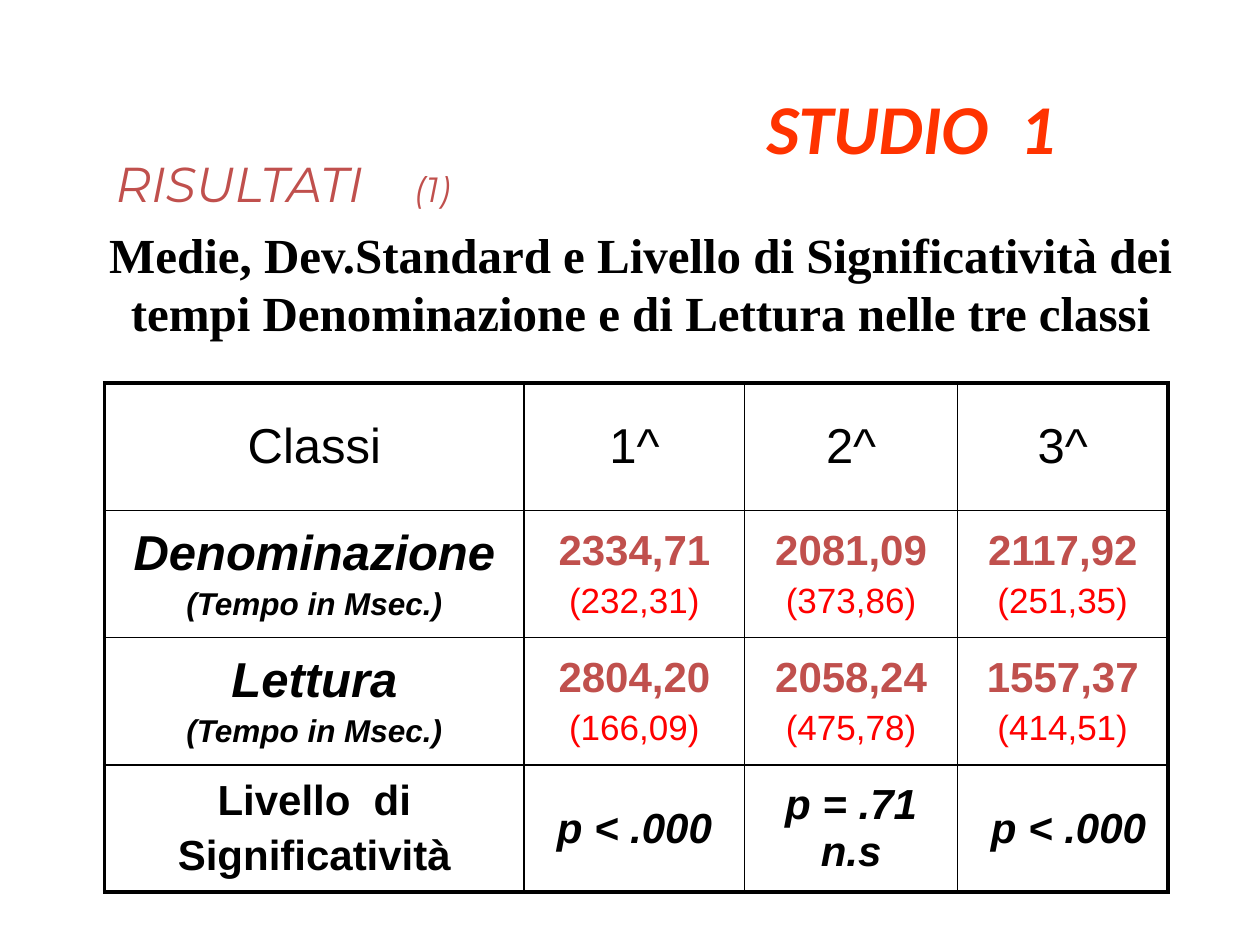
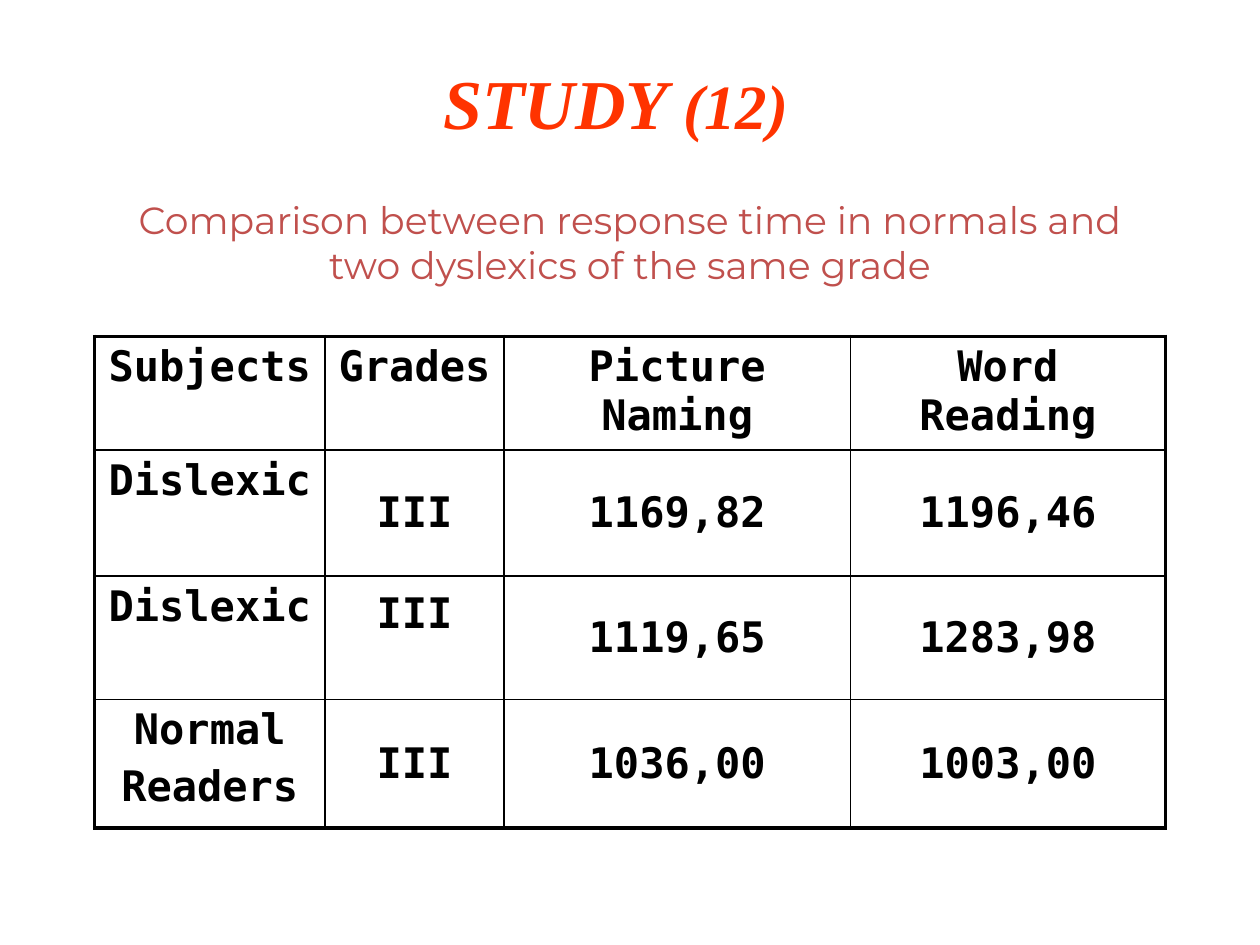
"""Build two result slides, each with headings and a bordered table of response times."""
from lxml.etree import SubElement
from pptx import Presentation
from pptx.dml.color import RGBColor
from pptx.enum.text import MSO_ANCHOR, PP_ALIGN
from pptx.oxml.ns import qn
from pptx.util import Inches, Pt

BLACK, ORANGE, BRICK, RED = "000000", "FF3300", "C0504D", "FF0000"
THIN, THICK = 1, 2.25


def color(hex_code):
    return RGBColor.from_string(hex_code)


def write(para, text, font="Arial", size=28, fill=BLACK, bold=False, italic=False, align=PP_ALIGN.CENTER):
    para.alignment = align
    span = para.add_run()
    span.text = text
    span.font.name = font
    span.font.size = Pt(size)
    span.font.bold = bold
    span.font.italic = italic
    span.font.color.rgb = color(fill)


class_head = {}
task = {"bold": True, "italic": True}
unit = {"size": 18, "bold": True, "italic": True}
mean = {"size": 24, "fill": BRICK, "bold": True}
deviation = {"size": 20, "fill": RED}
level = {"size": 24, "bold": True}
probability = {"size": 24, "bold": True, "italic": True}
mono = {"font": "DejaVu Sans Mono", "size": 24, "bold": True}
studio = {"font": "Calibri", "size": 40, "fill": ORANGE, "bold": True, "italic": True}
study = {**studio, "font": "Times New Roman", "align": PP_ALIGN.LEFT}
results = {"font": "Montserrat", "size": 28, "fill": BRICK, "italic": True, "align": PP_ALIGN.LEFT}
caption = {"font": "Times New Roman", "size": 28, "bold": True}
comparison = {"font": "Montserrat", "size": 21.6, "fill": BRICK}

class_rows = [[[(text, class_head)] for text in ("Classi", "1^", "2^", "3^")]]
for name, scores in (
    ("Denominazione", (("2334,71", "(232,31)"), ("2081,09", "(373,86)"), ("2117,92", "(251,35)"))),
    ("Lettura", (("2804,20", "(166,09)"), ("2058,24", "(475,78)"), ("1557,37", "(414,51)"))),
):
    class_rows.append([[(name, task), ("(Tempo in Msec.)", unit)]]
                      + [[(average, mean), (spread, deviation)] for average, spread in scores])
class_rows.append([[("Livello  di", level), ("Significatività", level)]]
                  + [[(text, probability)] for text in ("p < .000", "p = .71 n.s", " p < .000")])

reader_rows = [[[(line, mono) for line in text.split("\n")] for text in row] for row in (
    ("Subjects", "Grades", "Picture Naming", "Word Reading"),
    ("Dislexic", "III", "1169,82", "1196,46"),
    ("Dislexic", "III", "1119,65", "1283,98"),
    ("Normal\nReaders", "III", "1036,00", "1003,00"),
)]

pages = [
    {
        "boxes": [
            ((4.98, 0.6, 4.5, 0.81), MSO_ANCHOR.MIDDLE, True, [("STUDIO  1", studio)]),
            ((0.82, 1.17, 3.78, 0.57), MSO_ANCHOR.TOP, True,
             [("RISULTATI\t", results), ("(1)", {**results, "size": 20})]),
            ((0.65, 1.73, 8.87, 1.03), MSO_ANCHOR.TOP, True,
             [("Medie, Dev.Standard e Livello di Significatività dei tempi Denominazione "
               "e di Lettura nelle tre classi", caption)]),
        ],
        "table_at": (0.83, 3.04),
        "widths": (3.33, 1.75, 1.69, 1.67),
        "heights": (1.01, 1.01, 1.01, 1.01),
        "rows": class_rows,
        "top_cells": set(),
        "raised_cells": set(),
    },
    {
        "boxes": [
            ((0.75, 1.42, 8.5, 1), MSO_ANCHOR.MIDDLE, True,
             [("Comparison between response time in normals and two dyslexics of the same grade", comparison)]),
            ((3.42, 0.42, 2.96, 0.77), MSO_ANCHOR.TOP, False,
             [("STUDY ", study), ("(12)", {**study, "size": 36})]),
        ],
        "table_at": (0.75, 2.67),
        "widths": (1.83, 1.42, 2.75, 2.5),
        "heights": (0.75, 1, 0.98, 1.02),
        "rows": reader_rows,
        "top_cells": {(r, c) for r in range(4) for c in range(4) if r == 0 or c == 0},
        "raised_cells": {(2, 1)},
    },
]

deck = Presentation()
deck.slide_width, deck.slide_height = Inches(10), Inches(7.5)

for content in pages:
    page = deck.slides.add_slide(deck.slide_layouts[6])
    for place, anchor, wrap, spans in content["boxes"]:
        frame = page.shapes.add_textbox(*map(Inches, place)).text_frame
        frame.word_wrap = wrap
        frame.vertical_anchor = anchor
        para = frame.paragraphs[0]
        for text, style in spans:
            write(para, text, **style)
            if text.endswith("\t"):
                tabs = SubElement(para._p.get_or_add_pPr(), qn("a:tabLst"))
                SubElement(tabs, qn("a:tab"), pos=str(Inches(2.37)), algn="l")

    widths, heights, rows = content["widths"], content["heights"], content["rows"]
    extent = (*content["table_at"], sum(widths), sum(heights))
    table = page.shapes.add_table(len(rows), len(widths), *map(Inches, extent)).table
    table.first_row = table.horz_banding = False
    for column, width in zip(table.columns, widths):
        column.width = Inches(width)
    for row, height in zip(table.rows, heights):
        row.height = Inches(height)

    for r, row in enumerate(rows):
        for c, lines in enumerate(row):
            cell = table.cell(r, c)
            cell.vertical_anchor = MSO_ANCHOR.TOP if (r, c) in content["top_cells"] else MSO_ANCHOR.MIDDLE
            if (r, c) in content["raised_cells"]:
                cell.margin_bottom = Inches(0.43)
            for number, (text, style) in enumerate(lines):
                para = cell.text_frame.add_paragraph() if number else cell.text_frame.paragraphs[0]
                write(para, text, **style)
                before = SubElement(para._p.get_or_add_pPr(), qn("a:spcBef"))
                SubElement(before, qn("a:spcPct"), val="20000")
            properties = cell._tc.get_or_add_tcPr()
            outer_sides = (("L", c == 0), ("R", c == len(widths) - 1), ("T", r == 0), ("B", r == len(rows) - 1))
            for side, outer in outer_sides:
                border = SubElement(properties, qn("a:ln" + side), w=str(Pt(THICK if outer else THIN)))
                fill = SubElement(border, qn("a:solidFill"))
                SubElement(fill, qn("a:srgbClr"), val=BLACK)
            cell.fill.background()

deck.save("out.pptx")
